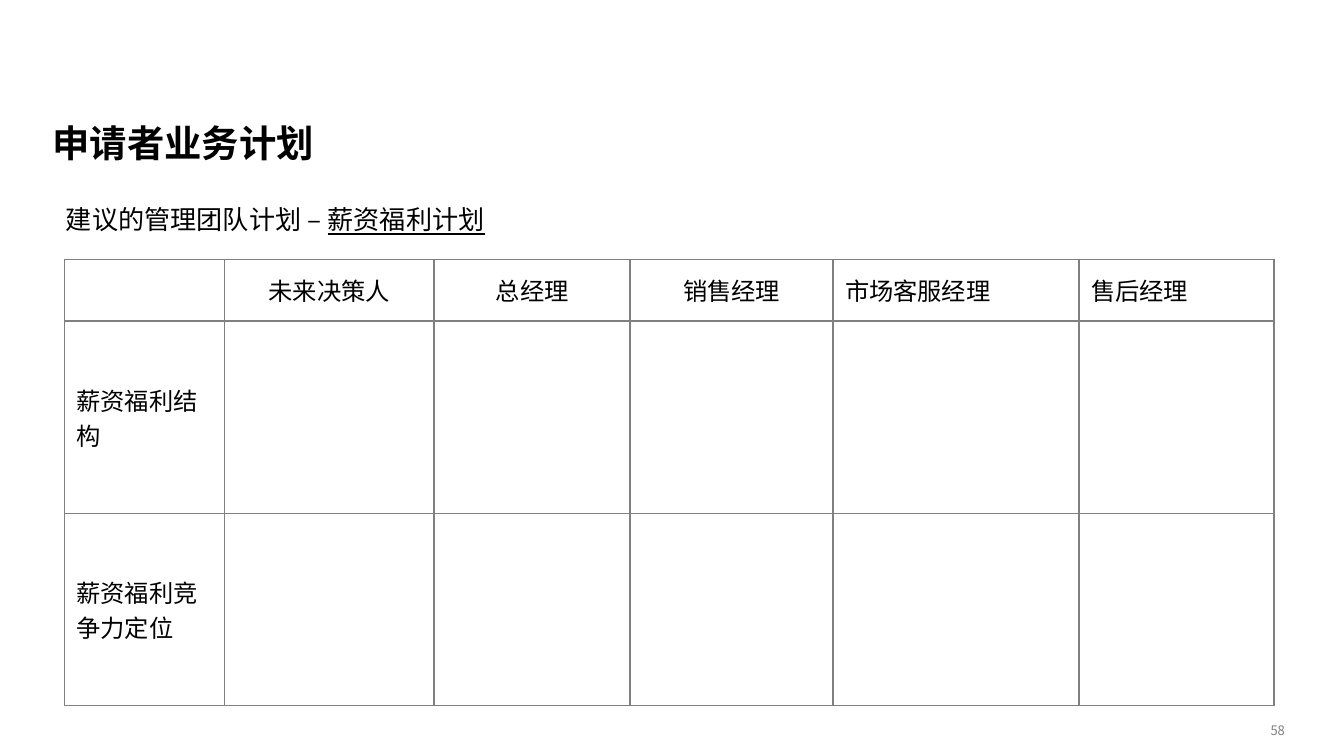
from lxml.etree import SubElement
from pptx import Presentation
from pptx.dml.color import RGBColor
from pptx.enum.text import MSO_ANCHOR, PP_ALIGN
from pptx.oxml import parse_xml
from pptx.oxml.ns import nsdecls, qn
from pptx.util import Inches, Pt

FONT = "Noto Sans CJK SC"
BLACK, GREY = "000000", "808080"


def style(para, size, color=BLACK, bold=False):
    """Set the paragraph font for both Latin and Chinese characters."""
    font = para.font
    font.size, font.bold, font.name = Pt(size), bold, FONT
    font.color.rgb = RGBColor.from_string(color)
    SubElement(para._p.pPr.find(qn("a:defRPr")), qn("a:ea"), typeface=FONT)


def add_text(left, top, width, height, runs, anchor=MSO_ANCHOR.TOP):
    """Add a text box without margins and return its paragraph."""
    box = page.shapes.add_textbox(Inches(left), Inches(top), Inches(width), Inches(height))
    frame = box.text_frame
    frame.word_wrap = True
    frame.vertical_anchor = anchor
    frame.margin_left = frame.margin_right = frame.margin_top = frame.margin_bottom = 0
    para = frame.paragraphs[0]
    for text in runs:
        para.add_run().text = text
    return para


deck = Presentation()
deck.slide_width = Inches(10)
deck.slide_height = Inches(10 * 9 / 16)
page = deck.slides.add_slide(deck.slide_layouts[6])

# Compensation table
column_widths = [1.19, 1.56, 1.46, 1.51, 1.83, 1.45]
row_heights = [0.46, 1.43, 1.43]
headers = ["", "未来决策人", "总经理", "销售经理", "市场客服经理", "售后经理"]
row_labels = ["", "薪资福利结构", "薪资福利竞争力定位"]
centred_columns = (1, 2, 3)

table = page.shapes.add_table(
    len(row_heights), len(column_widths), Inches(0.48), Inches(1.93),
    Inches(sum(column_widths)), Inches(sum(row_heights))).table
table.first_row = table.horz_banding = False
for column, width in zip(table.columns, column_widths):
    column.width = Inches(width)

for r, height in enumerate(row_heights):
    table.rows[r].height = Inches(height)
    for c in range(len(column_widths)):
        cell = table.cell(r, c)
        cell.fill.background()
        for index, side in enumerate(("lnL", "lnR", "lnT", "lnB")):
            cell._tc.get_or_add_tcPr().insert(index, parse_xml(
                f'<a:{side} {nsdecls("a")} w="{Pt(1)}"><a:solidFill>'
                f'<a:srgbClr val="{GREY}"/></a:solidFill></a:{side}>'))
        text = headers[c] if r == 0 else row_labels[r] if c == 0 else ""
        if text:
            cell.vertical_anchor = MSO_ANCHOR.MIDDLE
            cell.margin_left = cell.margin_right = Inches(0.09)
            cell.margin_top = cell.margin_bottom = Inches(0.05)
            para = cell.text_frame.paragraphs[0]
            para.add_run().text = text
            para.alignment = PP_ALIGN.CENTER if c in centred_columns else PP_ALIGN.LEFT
            style(para, 13)

# Subtitle, title and page number
subtitle = add_text(0.49, 1.47, 9.18, 3.78, ["建议的管理团队计划 – ", "薪资福利计划"])
subtitle.line_spacing = 1.2
style(subtitle, 14)
subtitle.runs[1].font.underline = True

title = add_text(0.39, 0.88, 9.18, 0.35, ["申请者业务计划"], MSO_ANCHOR.BOTTOM)
title.line_spacing = 0.9
style(title, 20, bold=True)

number = add_text(9.17, 5.38, 0.39, 0.11, ["58"], MSO_ANCHOR.MIDDLE)
number.alignment = PP_ALIGN.RIGHT
style(number, 7, GREY)

deck.save("out.pptx")
